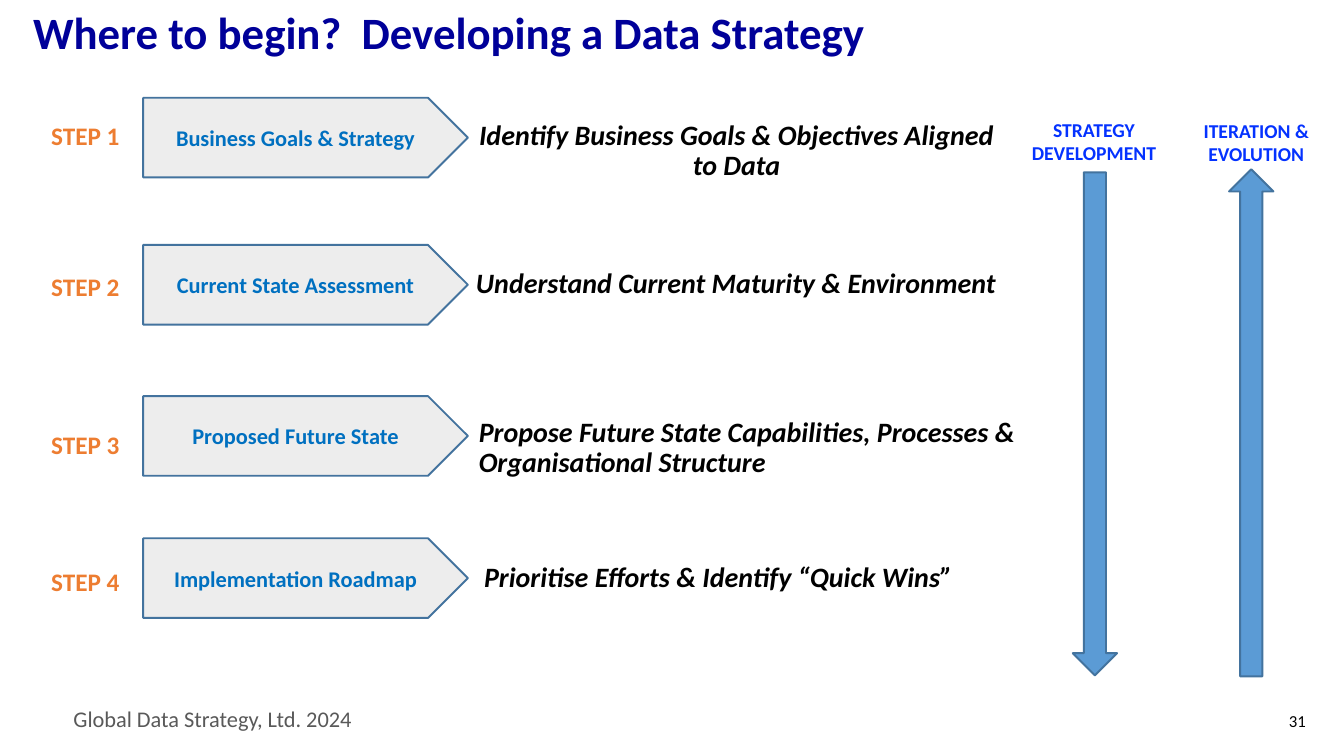
from pptx import Presentation
from pptx.dml.color import RGBColor
from pptx.enum.shapes import MSO_SHAPE as SHAPE
from pptx.enum.text import MSO_ANCHOR as ANCHOR, PP_ALIGN as ALIGN
from pptx.util import Inches, Pt

NAVY = RGBColor(0x00, 0x00, 0x99)
BLUE = RGBColor(0x00, 0x70, 0xC0)
BRIGHT = RGBColor(0x04, 0x32, 0xFF)
ORANGE = RGBColor(0xED, 0x7D, 0x31)
GREY = RGBColor(0x59, 0x59, 0x59)
BLACK = RGBColor(0x00, 0x00, 0x00)
PALE = RGBColor(0xED, 0xED, 0xED)
ARROW = RGBColor(0x5B, 0x9B, 0xD5)
OUTLINE = RGBColor(0x43, 0x73, 0x9E)

TITLE = "Where to begin?  Developing a Data Strategy"
FOOTER = "Global Data Strategy, Ltd. 2024"
PAGE = "31"

STEPS = [
    {"name": "Business Goals & Strategy", "top": 0.97, "label_top": 1.14,
     "goal": ["Identify Business Goals & Objectives Aligned to Data"],
     "box": (4.52, 1.15, 5.57, 0.53), "align": ALIGN.CENTER, "spacing": 0.9},
    {"name": "Current State Assessment", "top": 2.43, "label_top": 2.64,
     "goal": ["Understand Current Maturity & Environment"],
     "box": (3.88, 2.65, 6.84, 0.4), "align": ALIGN.CENTER, "spacing": 0.8},
    {"name": "Proposed Future State", "top": 3.93, "label_top": 4.21,
     "goal": ["Propose Future State Capabilities, Processes &",
              "Organisational Structure"],
     "box": (4.65, 4.1, 8.41, 0.47), "align": ALIGN.LEFT, "spacing": 0.9},
    {"name": "Implementation Roadmap", "top": 5.34, "label_top": 5.57,
     "goal": ["Prioritise Efforts & Identify “Quick Wins”"],
     "box": (3.93, 5.54, 6.39, 0.4), "align": ALIGN.CENTER, "spacing": 0.9},
]

FLOWS = [
    ("STRATEGY DEVELOPMENT", (10.09, 1.12, 1.52, 0.57),
     SHAPE.DOWN_ARROW, (10.64, 1.71, 0.44, 4.99)),
    ("ITERATION & EVOLUTION", (11.7, 1.13, 1.52, 0.57),
     SHAPE.UP_ARROW, (12.19, 1.68, 0.44, 5.03)),
]

STYLES = {
    "title": {"size": Pt(32), "bold": True},
    "name": {"size": Pt(16), "bold": True},
    "goal": {"size": Pt(20), "bold": True, "italic": True},
    "step": {"size": Pt(18), "bold": True},
    "flow": {"size": Pt(14), "bold": True},
    "footer": {"size": Pt(16)},
    "page": {"size": Pt(12)},
}


def write(sp, lines, style, color, align=ALIGN.LEFT, anchor=ANCHOR.TOP,
          spacing=None, wrap=True):
    tf = sp.text_frame
    tf.word_wrap = wrap
    tf.vertical_anchor = anchor
    for i, line in enumerate(lines):
        p = tf.add_paragraph() if i else tf.paragraphs[0]
        p.alignment = align
        p.line_spacing = spacing
        r = p.add_run()
        r.text = line
        r.font.name = "Calibri"
        r.font.color.rgb = color
        for key, value in STYLES[style].items():
            setattr(r.font, key, value)


def add_text(s, box, *args, **kwargs):
    write(s.shapes.add_textbox(*map(Inches, box)), *args, **kwargs)


def add_block(s, kind, box, fill):
    sp = s.shapes.add_shape(kind, *map(Inches, box))
    sp.shadow.inherit = False
    sp.fill.solid()
    sp.fill.fore_color.rgb = fill
    sp.line.color.rgb = OUTLINE
    sp.line.width = Pt(1.35)
    return sp


def main():
    prs = Presentation()
    prs.slide_width, prs.slide_height = Inches(13.33), Inches(7.5)
    s = prs.slides.add_slide(prs.slide_layouts[6])

    add_text(s, (0.23, 0.01, 11.5, 0.68), [TITLE], "title", NAVY,
             anchor=ANCHOR.MIDDLE, spacing=0.9)

    for number, step in enumerate(STEPS, 1):
        add_text(s, (0.41, step["label_top"], 0.94, 0.4), [f"STEP {number}"],
                 "step", ORANGE, wrap=False)
        sp = add_block(s, SHAPE.PENTAGON, (1.42, step["top"], 3.22, 0.79), PALE)
        write(sp, [step["name"]], "name", BLUE, ALIGN.CENTER, ANCHOR.MIDDLE)
        add_text(s, step["box"], step["goal"], "goal", BLACK, step["align"],
                 spacing=step["spacing"])

    for label, label_box, kind, arrow_box in FLOWS:
        add_block(s, kind, arrow_box, ARROW)
        add_text(s, label_box, [label], "flow", BRIGHT, ALIGN.CENTER)

    add_text(s, (0.63, 6.95, 3.62, 0.37), [FOOTER], "footer", GREY)
    add_text(s, (12.42, 6.95, 0.63, 0.4), [PAGE], "page", BLACK, ALIGN.RIGHT,
             ANCHOR.MIDDLE)

    prs.save("out.pptx")


if __name__ == "__main__":
    main()
